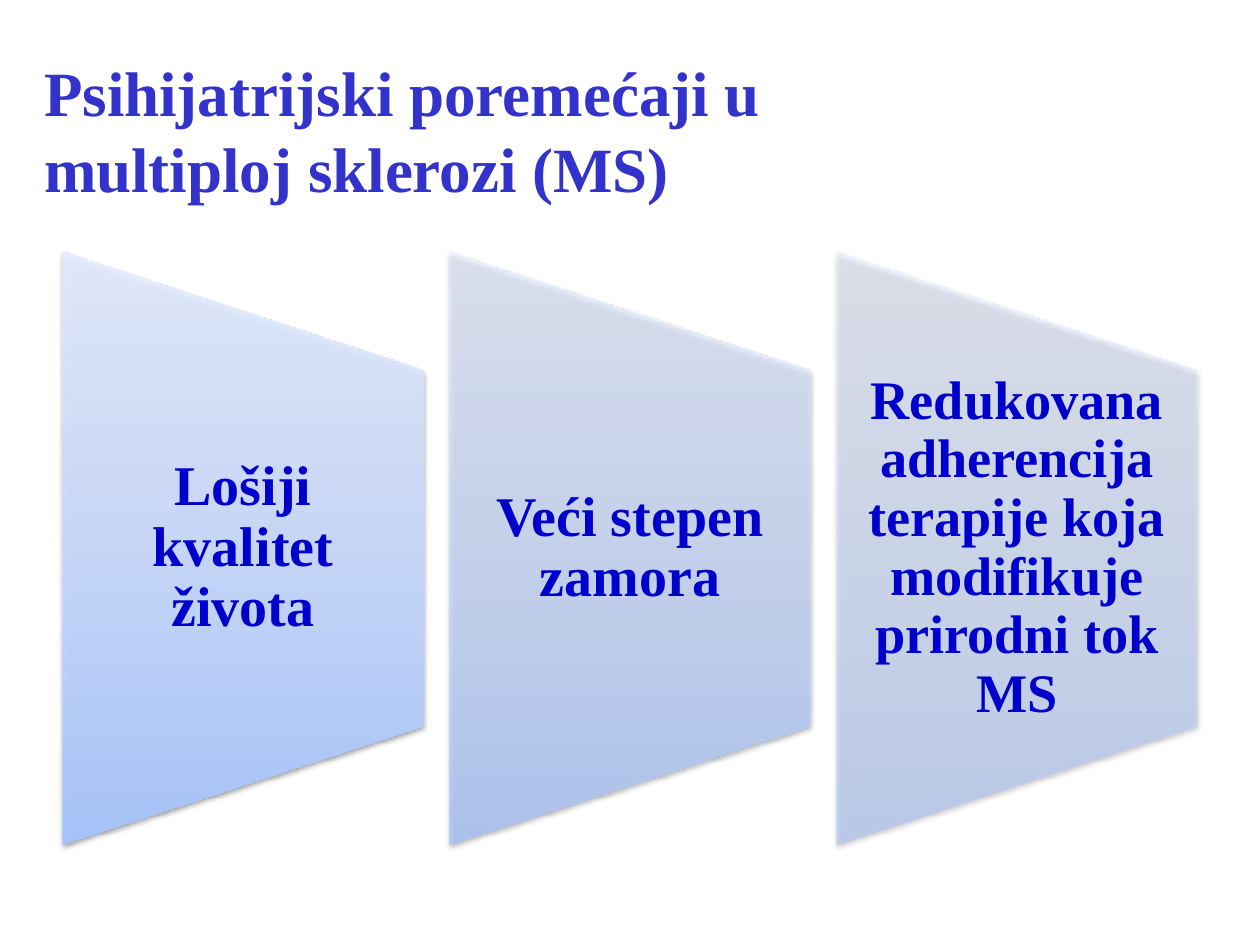
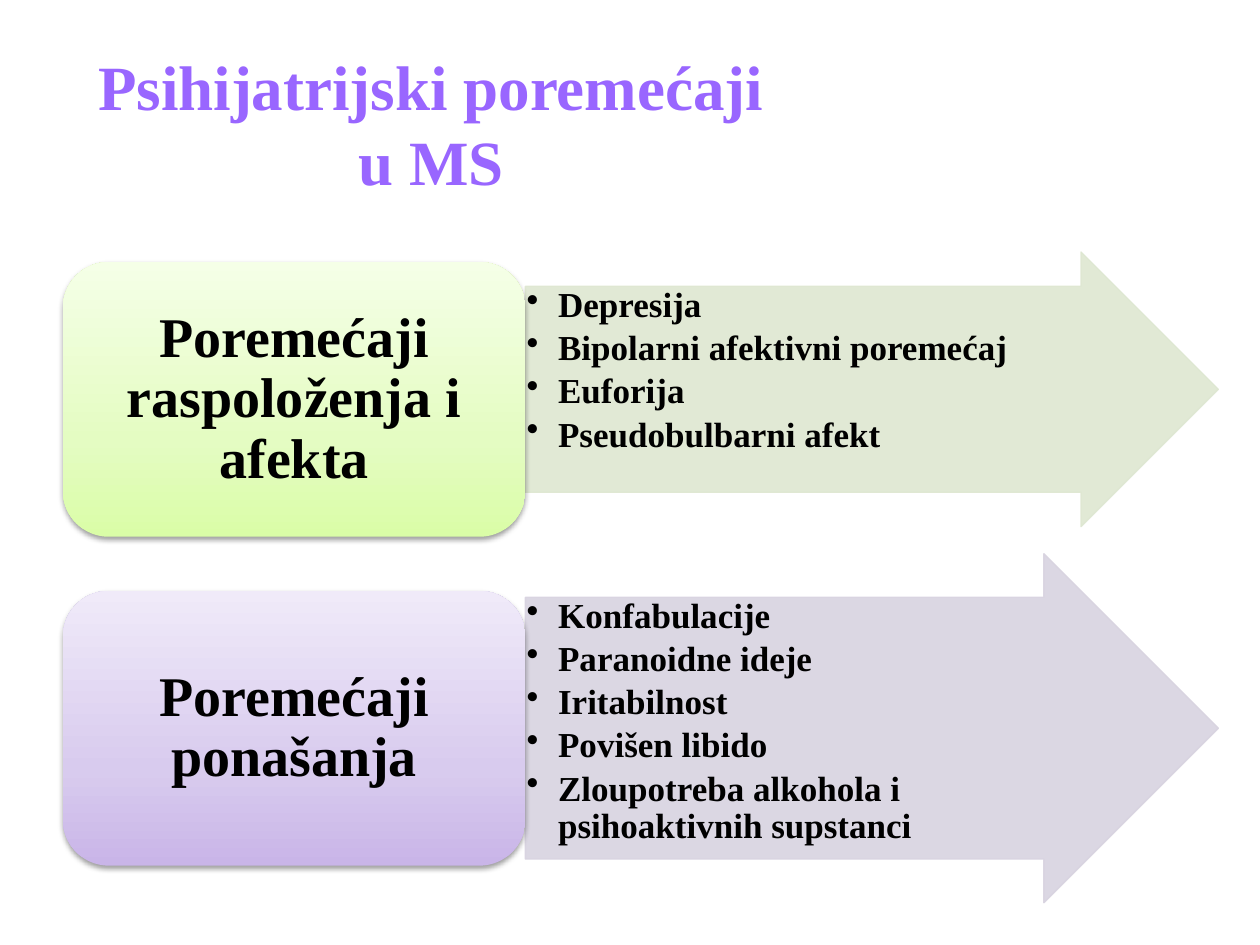
from dataclasses import dataclass

from lxml.etree import SubElement
from pptx import Presentation
from pptx.dml.color import RGBColor
from pptx.enum.shapes import MSO_SHAPE as Kind
from pptx.enum.text import MSO_ANCHOR as Anchor, PP_ALIGN as Align
from pptx.oxml.ns import qn
from pptx.util import Inches, Pt


@dataclass(frozen=True)
class Theme:
    face: str = "Times New Roman"
    title: int = 36
    label: int = 32
    dense: int = 31
    item: int = 20
    blue: str = "3333CC"
    violet: str = "9966FF"
    navy: str = "0000CC"
    black: str = "000000"
    sky: tuple = ("A4C4FF", "BFD4FF", "E6EEFF")
    lime: tuple = ("DAFDA7", "E4FCC2", "F5FFE7")
    lilac: tuple = ("C9B5E8", "D8CBEE", "F0EAF9")
    sage: str = "DEE7D1"
    mauve: str = "D8D3E0"


T = Theme()


def node(parent, tag, **attrs):
    child = SubElement(parent, qn(tag))
    for name, value in attrs.items():
        child.set(name, str(value))
    return child


def place(item, box):
    for name, value in zip(("left", "top", "width", "height"), box):
        setattr(item, name, Inches(value))


def style(para, size, color, **fmt):
    for name, value in fmt.items():
        setattr(para, name, value)
    for name, value in {"name": T.face, "size": Pt(size), "bold": True}.items():
        setattr(para.font, name, value)
    para.font.color.rgb = RGBColor.from_string(color)


def frame(shape, pads, anchor):
    body = shape.text_frame
    body.word_wrap = True
    body.vertical_anchor = anchor
    for side, pad in zip(("left", "top", "right", "bottom"), pads):
        setattr(body, f"margin_{side}", Inches(pad))
    return body


def label(shape, text, size, color, pads):
    para = frame(shape, pads, Anchor.MIDDLE).paragraphs[0]
    para.text = text
    style(para, size, color, alignment=Align.CENTER, line_spacing=0.9)


def block(slide, kind, box):
    shape = slide.shapes.add_shape(kind, *map(Inches, box))
    shape.shadow.inherit = False
    return shape


def glow(shape, colors, alpha=100):
    """Upward gradient with a soft shadow below."""
    shape.line.fill.background()
    shape.fill.gradient()
    props = shape.element.spPr
    grad = props.find(qn("a:gradFill"))
    for child in list(grad):
        grad.remove(child)
    grad.set("rotWithShape", "0")
    stops = node(grad, "a:gsLst")
    for pos, color in zip((0, 35, 100), colors):
        stop = node(stops, "a:gs", pos=pos * 1000)
        node(node(stop, "a:srgbClr", val=color), "a:alpha", val=alpha * 1000)
    node(grad, "a:lin", ang=16200000, scaled=0)
    shade = node(props.find(qn("a:effectLst")), "a:outerShdw", blurRad=40000,
                 dist=20000, dir=5400000, rotWithShape=0)
    node(node(shade, "a:srgbClr", val=T.black), "a:alpha", val=38000)


def start(deck, text, box, color, align):
    """Add a title-only slide with its title set."""
    slide = deck.slides.add_slide(deck.slide_layouts[5])
    title = slide.shapes.title
    place(title, box)
    para = frame(title, (0.1, 0.05, 0.1, 0.05), Anchor.MIDDLE).paragraphs[0]
    para.text = text
    style(para, T.title, color, alignment=align)
    return slide


def panel(slide, box, text, size, alpha):
    """Tapered panel, turned on its side, with upright text."""
    left, top, wide, high = box
    midx, midy = left + wide / 2, top + high / 2
    shape = block(slide, Kind.FLOWCHART_MANUAL_OPERATION,
                  (midx - high / 2, midy - wide / 2, high, wide))
    shape.rotation = 270
    glow(shape, T.sky, alpha)
    tall = high * 0.6
    note = slide.shapes.add_textbox(
        *map(Inches, (left, midy - tall / 2, wide, tall)))
    label(note, text, size, T.navy, (0.22, 0, 0.22, 0))


def arrow(slide, box, items, color):
    """Pale arrow that holds a bullet list."""
    shape = block(slide, Kind.RIGHT_ARROW, box)
    shape.adjustments[0], shape.adjustments[1] = 0.75, 0.5
    shape.line.width = Pt(0.75)
    for fill in (shape.fill, shape.line.fill):
        fill.solid()
        fill.fore_color.rgb = RGBColor.from_string(color)
    for tone in shape.element.spPr.iter(qn("a:srgbClr")):
        node(tone, "a:alpha", val=90000)
    body = frame(shape, [0.01] * 4, Anchor.TOP)
    for i, item in enumerate(items):
        para = body.add_paragraph() if i else body.paragraphs[0]
        para.text = item
        props = para._p.get_or_add_pPr()
        props.set("marL", str(Inches(0.25)))
        props.set("indent", str(-Inches(0.25)))
        node(props, "a:buChar", char="•")
        style(para, T.item, T.black, alignment=Align.LEFT,
              line_spacing=0.9, space_after=Pt(3))


def card(slide, box, text, colors):
    shape = block(slide, Kind.ROUNDED_RECTANGLE, box)
    glow(shape, colors)
    label(shape, text, T.label, T.black, (0.13, 0.07, 0.13, 0.07))


def effects(deck):
    slide = start(deck, "Psihijatrijski poremećaji u multiploj sklerozi (MS)",
                  (0.25, 0.3, 7.67, 1.45), T.blue, Align.LEFT)
    panels = [
        ("Lošiji kvalitet života", T.label),
        ("Veći stepen zamora", T.label),
        ("Redukovana adherencija terapije koja modifikuje prirodni tok MS",
         T.dense),
    ]
    for i, (text, size) in enumerate(panels):
        panel(slide, (0.5 + i * 3.07, 2, 2.86, 4.7), text, size, 90 - 20 * i)


def groups(deck):
    slide = start(deck, "Psihijatrijski poremećaji\vu MS",
                  (0.17, 0.25, 6.5, 1.45), T.violet, Align.CENTER)
    rows = [
        ("Poremećaji raspoloženja i afekta", T.lime, T.sage, 3.09, 2.18, 3.17,
         ["Depresija", "Bipolarni afektivni poremećaj", "Euforija",
          "Pseudobulbarni afekt"]),
        ("Poremećaji ponašanja", T.lilac, T.mauve, 5.78, 2.77, 5.78,
         ["Konfabulacije", "Paranoidne ideje", "Iritabilnost",
          "Povišen libido",
          "Zloupotreba alkohola i psihoaktivnih supstanci"]),
    ]
    for text, colors, pale, axis, high, mid, items in rows:
        arrow(slide, (4.17, axis - high / 2, 5.5, high), items, pale)
        card(slide, (0.5, mid - 1.09, 3.67, 2.18), text, colors)


def main():
    deck = Presentation()
    deck.slide_width, deck.slide_height = Inches(10), Inches(7.5)
    effects(deck)
    groups(deck)
    deck.save("out.pptx")


if __name__ == "__main__":
    main()
